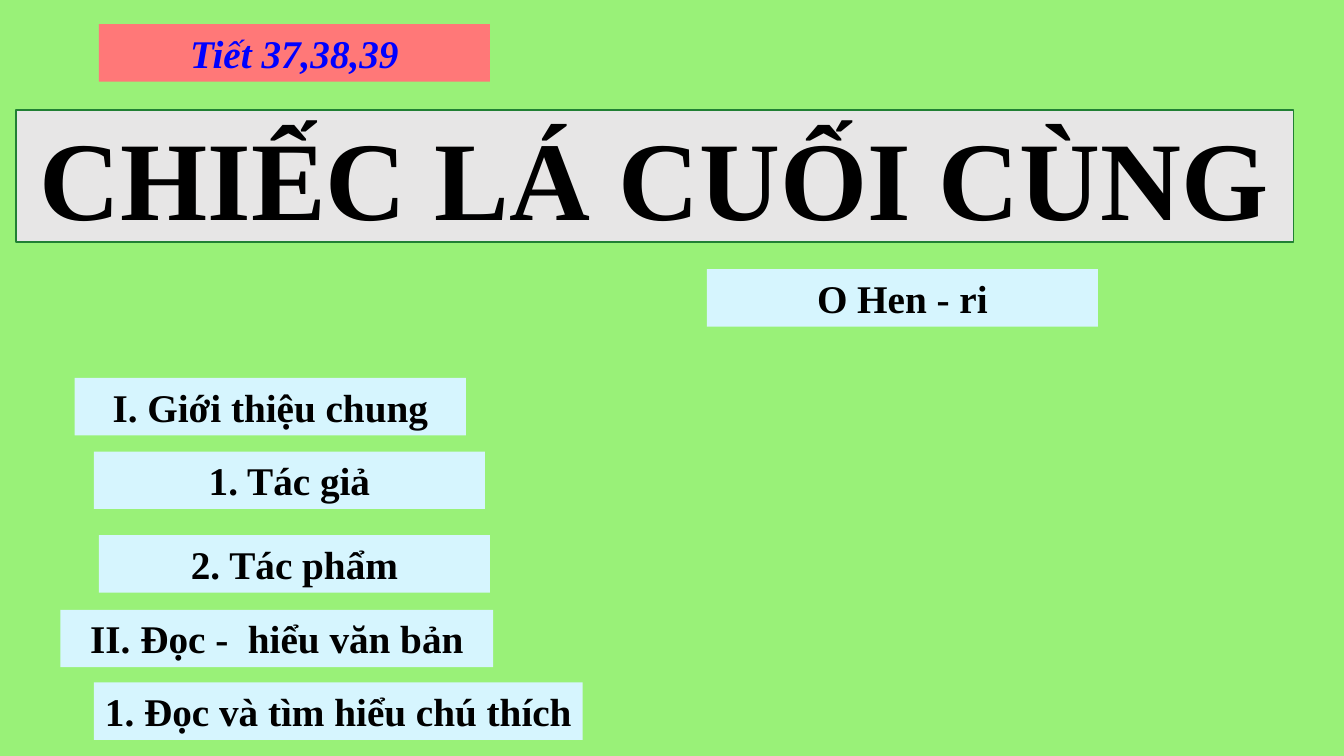
"""Build the title slide of a literature lesson with its outline labels."""
import pptx
import pptx.util
import pptx.dml.color
import pptx.enum.text
import pptx.oxml

RGBColor = pptx.dml.color.RGBColor
GREEN = RGBColor(0x99, 0xF1, 0x78)
EDGE = RGBColor(0x21, 0x80, 0x34)
CORAL = RGBColor(0xFF, 0x78, 0x78)
GREY = RGBColor(0xE7, 0xE6, 0xE6)
SKY = RGBColor(0xD6, 0xF5, 0xFE)
BLUE = RGBColor(0, 0, 0xFF)
BLACK = RGBColor(0, 0, 0)

SCALE = 9144
HIGH = 57
WIDE = 388
FONT = "Times New Roman"
ROUND = (
    '<a:prstGeom xmlns:a="http://schemas.openxmlformats.org/drawingml/2006/main"'
    ' prst="roundRect"><a:avLst/></a:prstGeom>'
)
LABELS = [
    ("O Hen - ri", 701, 267, WIDE),
    ("I. Giới thiệu chung", 74, 375, WIDE),
    ("1. Tác giả", 93, 448, WIDE),
    ("2. Tác phẩm", 98, 531, WIDE),
    ("II. Đọc -  hiểu văn bản", 60, 605, 429),
    ("1. Đọc và tìm hiểu chú thích", 93, 677, 485),
]


def px(size):
    return pptx.util.Emu(size * SCALE)


def write(shape, text, size=28, color=BLACK, slant=False, anchor="TOP"):
    frame = shape.text_frame
    frame.word_wrap = True
    frame.auto_size = pptx.enum.text.MSO_AUTO_SIZE.NONE
    frame.vertical_anchor = pptx.enum.text.MSO_ANCHOR[anchor]
    line = frame.paragraphs[0]
    line.alignment = pptx.enum.text.PP_ALIGN.CENTER
    run = line.add_run()
    run.text = text
    font = run.font
    font.name = FONT
    font.size = pptx.util.Pt(size)
    font.bold = True
    font.italic = slant
    font.color.rgb = color


def paint(shape, color):
    shape.fill.solid()
    shape.fill.fore_color.rgb = color


def label(slide, text, left, top, wide, fill=SKY, **style):
    box = slide.shapes.add_textbox(px(left), px(top), px(wide), px(HIGH))
    paint(box, fill)
    write(box, text, **style)


def banner(slide, text, left, top, wide, high):
    title = slide.shapes.title
    title.left, title.top = px(left), px(top)
    title.width, title.height = px(wide), px(high)
    title.element.spPr.append(pptx.oxml.parse_xml(ROUND))
    paint(title, GREY)
    title.line.color.rgb = EDGE
    title.line.width = pptx.util.Pt(1)
    write(title, text, size=80, anchor="MIDDLE")


def main():
    deck = pptx.Presentation()
    deck.slide_width, deck.slide_height = px(1333), px(750)
    slide = deck.slides.add_slide(deck.slide_layouts[5])
    paint(slide.background, GREEN)
    label(slide, "Tiết 37,38,39", 98, 24, WIDE, fill=CORAL, color=BLUE, slant=True)
    banner(slide, "CHIẾC LÁ CUỐI CÙNG", 16, 109, 1267, 131)
    for item in LABELS:
        label(slide, *item)
    deck.save("out.pptx")


if __name__ == "__main__":
    main()
